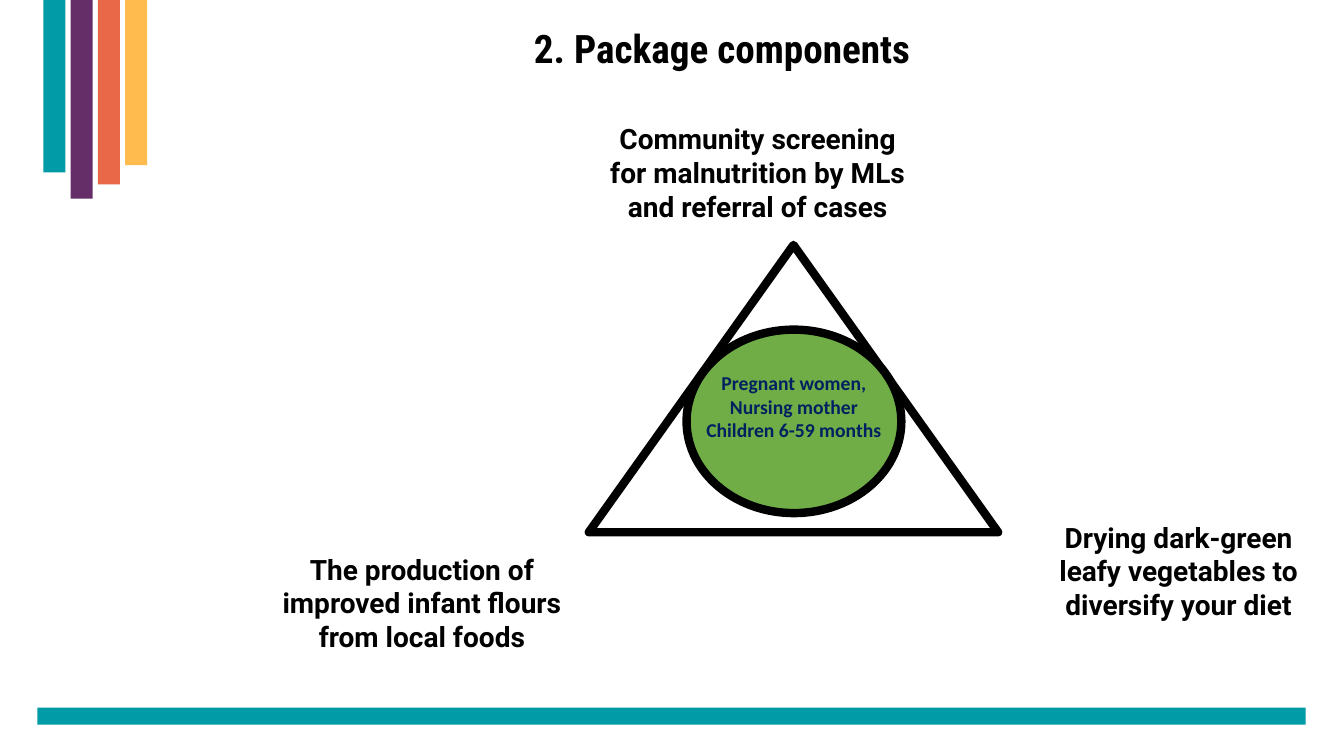
from dataclasses import dataclass

from pptx import Presentation
from pptx import util as u
from pptx.dml.color import RGBColor
from pptx.enum import shapes, text


@dataclass(frozen=True)
class Theme:
    teal: str = "009BA7"
    purple: str = "662E68"
    coral: str = "E96848"
    amber: str = "FFBB4D"
    green: str = "70AD47"
    navy: str = "002060"
    black: str = "000000"
    white: str = "FFFFFF"
    title_size: int = 28
    label_size: int = 20
    group_size: int = 14
    outline: int = 6


T = Theme()
PX = u.Inches(1) // 100
SLIDE = (1333, 750)

TITLE = "2. Package components"
TITLE_BOX = (195, 10, 1042, 81)
FOOTER_BAR = (37, 702, 1258, 17)
BARS = [(T.teal, 171), (T.purple, 197), (T.coral, 183), (T.amber, 164)]
BAR_LEFT, BAR_WIDTH, BAR_STEP = 43, 22, 27
TRIANGLE = (584, 243, 406, 285)
CIRCLE = (681, 327, 213, 182)
CIRCLE_BOTTOM_INSET = 35
TARGET_GROUPS = ["Pregnant women,", "Nursing mother", "Children 6-59 months"]
COMPONENTS = [
    ("The production of improved infant flours from local foods", (239, 543, 359, 111)),
    ("Drying dark-green leafy vegetables to diversify your diet", (1026, 511, 286, 111)),
    ("Community screening for malnutrition by MLs and referral of cases", (584, 116, 335, 111)),
]

TITLE_FONT = dict(name="Roboto Condensed", size=u.Pt(T.title_size), bold=True)
LABEL_FONT = dict(name="Roboto", size=u.Pt(T.label_size), bold=True)
GROUP_FONT = dict(name="Calibri", size=u.Pt(T.group_size), bold=True)


def emu(box):
    return [v * PX for v in box]


def assign(obj, values):
    for key, value in values.items():
        setattr(obj, key, value)


def write(tf, lines, font, color, frame):
    assign(tf, frame)
    for i, line in enumerate(lines):
        p = tf.paragraphs[0] if i == 0 else tf.add_paragraph()
        p.alignment = text.PP_ALIGN.CENTER
        r = p.add_run()
        r.text = line
        assign(r.font, font)
        r.font.color.rgb = RGBColor.from_string(color)


def add_shape(s, kind, box, fill=None, line=None):
    sp = s.shapes.add_shape(kind, *emu(box))
    sp.shadow.inherit = False
    if fill:
        sp.fill.solid()
        sp.fill.fore_color.rgb = RGBColor.from_string(fill)
    else:
        sp.fill.background()
    if line:
        sp.line.color.rgb = RGBColor.from_string(line)
        sp.line.width = u.Pt(T.outline)
    else:
        sp.line.fill.background()
    return sp


def add_title(s):
    sp = s.shapes.title
    assign(sp, dict(zip(("left", "top", "width", "height"), emu(TITLE_BOX))))
    sp.fill.solid()
    sp.fill.fore_color.rgb = RGBColor.from_string(T.white)
    tf = sp.text_frame
    write(tf, [TITLE], TITLE_FONT, T.black, dict(
        word_wrap=True, auto_size=text.MSO_AUTO_SIZE.NONE,
        vertical_anchor=text.MSO_ANCHOR.MIDDLE))
    tf.paragraphs[0].line_spacing = 0.9


def main():
    prs = Presentation()
    prs.slide_width, prs.slide_height = emu(SLIDE)
    s = prs.slides.add_slide(prs.slide_layouts[5])
    kinds = shapes.MSO_SHAPE

    add_shape(s, kinds.RECTANGLE, FOOTER_BAR, T.teal)
    for i, (color, height) in enumerate(BARS):
        box = (BAR_LEFT + i * BAR_STEP, 0, BAR_WIDTH, height)
        add_shape(s, kinds.RECTANGLE, box, color)

    add_title(s)

    add_shape(s, kinds.ISOSCELES_TRIANGLE, TRIANGLE, line=T.black)
    sp = add_shape(s, kinds.OVAL, CIRCLE, T.green, T.black)
    write(sp.text_frame, TARGET_GROUPS, GROUP_FONT, T.navy, dict(
        word_wrap=False, vertical_anchor=text.MSO_ANCHOR.MIDDLE,
        margin_bottom=CIRCLE_BOTTOM_INSET * PX))

    for label, box in COMPONENTS:
        sp = s.shapes.add_textbox(*emu(box))
        write(sp.text_frame, [label], LABEL_FONT, T.black, dict(
            word_wrap=True, auto_size=text.MSO_AUTO_SIZE.SHAPE_TO_FIT_TEXT))

    prs.save("out.pptx")


if __name__ == "__main__":
    main()
